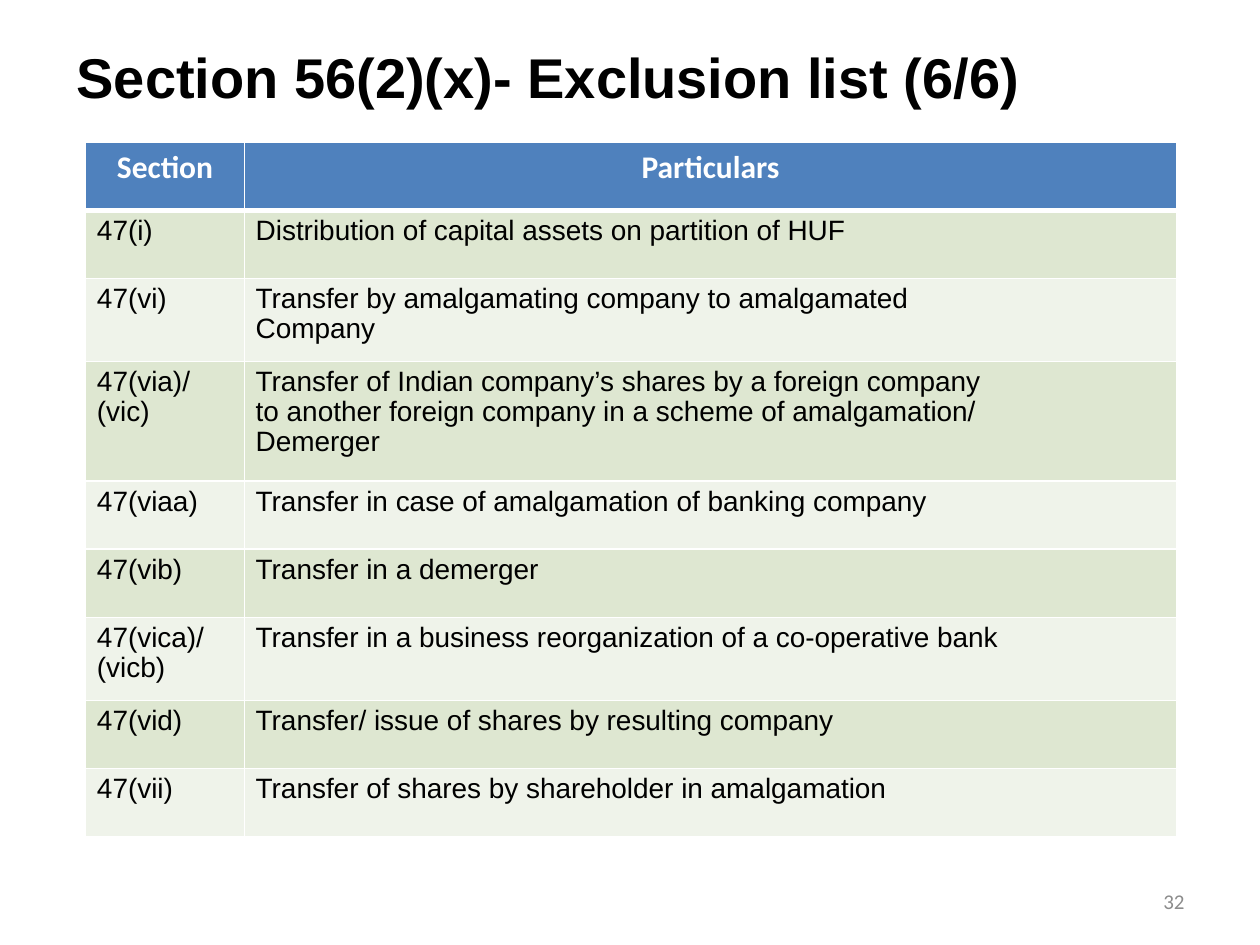
"""Build the slide listing transfers excluded from Section 56(2)(x)."""
from dataclasses import dataclass

from lxml import etree
from pptx import Presentation
from pptx.dml.color import RGBColor
from pptx.enum.text import MSO_ANCHOR, PP_ALIGN
from pptx.oxml.ns import qn
from pptx.util import Inches, Pt

LEFT, CENTER, RIGHT = PP_ALIGN.LEFT, PP_ALIGN.CENTER, PP_ALIGN.RIGHT
MIDDLE = MSO_ANCHOR.MIDDLE

TITLE = "Section 56(2)(x)- Exclusion list (6/6)"
PAGE = "32"
HEADS = ("Section", "Particulars")
ROWS = [
    ("47(i)", "Distribution of capital assets on partition of HUF"),
    ("47(vi)", "Transfer by amalgamating company to amalgamated\nCompany"),
    ("47(via)/\n(vic)",
     "Transfer of Indian company’s shares by a foreign company\n"
     "to another foreign company in a scheme of amalgamation/\n"
     "Demerger"),
    ("47(viaa)", "Transfer in case of amalgamation of banking company"),
    ("47(vib)", "Transfer in a demerger"),
    ("47(vica)/\n(vicb)",
     "Transfer in a business reorganization of a co-operative bank"),
    ("47(vid)", "Transfer/ issue of shares by resulting company"),
    ("47(vii)", "Transfer of shares by shareholder in amalgamation"),
]
WIDTHS = (1.26, 7.4)
HEIGHTS = {1: 0.54, 2: 0.66, 3: 0.95}


@dataclass(frozen=True)
class Theme:
    """Hold the colours, fonts and type sizes."""
    ink: str = "000000"
    white: str = "FFFFFF"
    grey: str = "8C8C8C"
    head: str = "4F81BD"
    bands: tuple = ("DEE7D1", "EFF3EA")
    sans: str = "Arial"
    alt: str = "Calibri"
    title: int = 32
    label: int = 18
    body: int = 16
    page: int = 12


THEME = Theme()


def write(frame, text, font, size, color, bold=False, align=LEFT, pitch=None):
    """Set the text of a frame and format its runs."""
    frame.text = text
    frame.word_wrap = True
    for para in frame.paragraphs:
        para.alignment = align
        para.line_spacing = pitch
        for run in para.runs:
            run.font.name = font
            run.font.size = Pt(size)
            run.font.bold = bold
            run.font.color.rgb = RGBColor.from_string(color)


def add_text(slide, box, *style, **more):
    """Add a text box that is centred on its height."""
    frame = slide.shapes.add_textbox(*map(Inches, box)).text_frame
    write(frame, *style, **more)
    frame.vertical_anchor = MIDDLE


def paint(cell, fill, base=1):
    """Give a cell its white borders and its fill."""
    props = cell._tc.get_or_add_tcPr()
    for side, width in zip("LRTB", (1, 1, 1, base)):
        line = etree.SubElement(props, qn(f"a:ln{side}"), w=str(Pt(width)))
        solid = etree.SubElement(line, qn("a:solidFill"))
        etree.SubElement(solid, qn("a:srgbClr"), val=THEME.white)
    cell.fill.solid()
    cell.fill.fore_color.rgb = RGBColor.from_string(fill)
    cell.margin_left = cell.margin_right = Inches(0.09)


def add_grid(slide):
    """Add the table, each row as high as its longest cell needs."""
    rows = [HEADS, *ROWS]
    tall = [HEIGHTS[max(text.count("\n") + 1 for text in row)] for row in rows]
    box = (0.68, 1.13, sum(WIDTHS), sum(tall))
    table = slide.shapes.add_table(
        len(rows), len(WIDTHS), *map(Inches, box)).table
    for col, width in zip(table.columns, WIDTHS):
        col.width = Inches(width)
    for r, row in enumerate(rows):
        table.rows[r].height = Inches(tall[r])
        for c, text in enumerate(row):
            cell = table.cell(r, c)
            if r == 0:
                paint(cell, THEME.head, base=3)
                write(cell.text_frame, text, THEME.alt, THEME.label,
                      THEME.white, bold=True, align=CENTER)
            else:
                paint(cell, THEME.bands[(r - 1) % 2],
                      base=1)
                write(cell.text_frame, text, THEME.sans, THEME.body,
                      THEME.ink, pitch=0.96)
    for c in range(len(WIDTHS)):
        top = table.cell(1, c)._tc.tcPr.find(qn("a:lnT"))
        top.set("w", str(Pt(3)))


def main():
    """Build and save the slide."""
    deck = Presentation()
    deck.slide_width, deck.slide_height = Inches(10), Inches(7.5)
    slide = deck.slides.add_slide(deck.slide_layouts[6])
    add_grid(slide)
    add_text(slide, (0.51, 0.21, 9, 0.79), TITLE, THEME.sans, THEME.title,
             THEME.ink, bold=True)
    add_text(slide, (7.17, 6.95, 2.33, 0.4), PAGE, THEME.alt, THEME.page,
             THEME.grey, align=RIGHT)
    deck.save("out.pptx")


if __name__ == "__main__":
    main()
